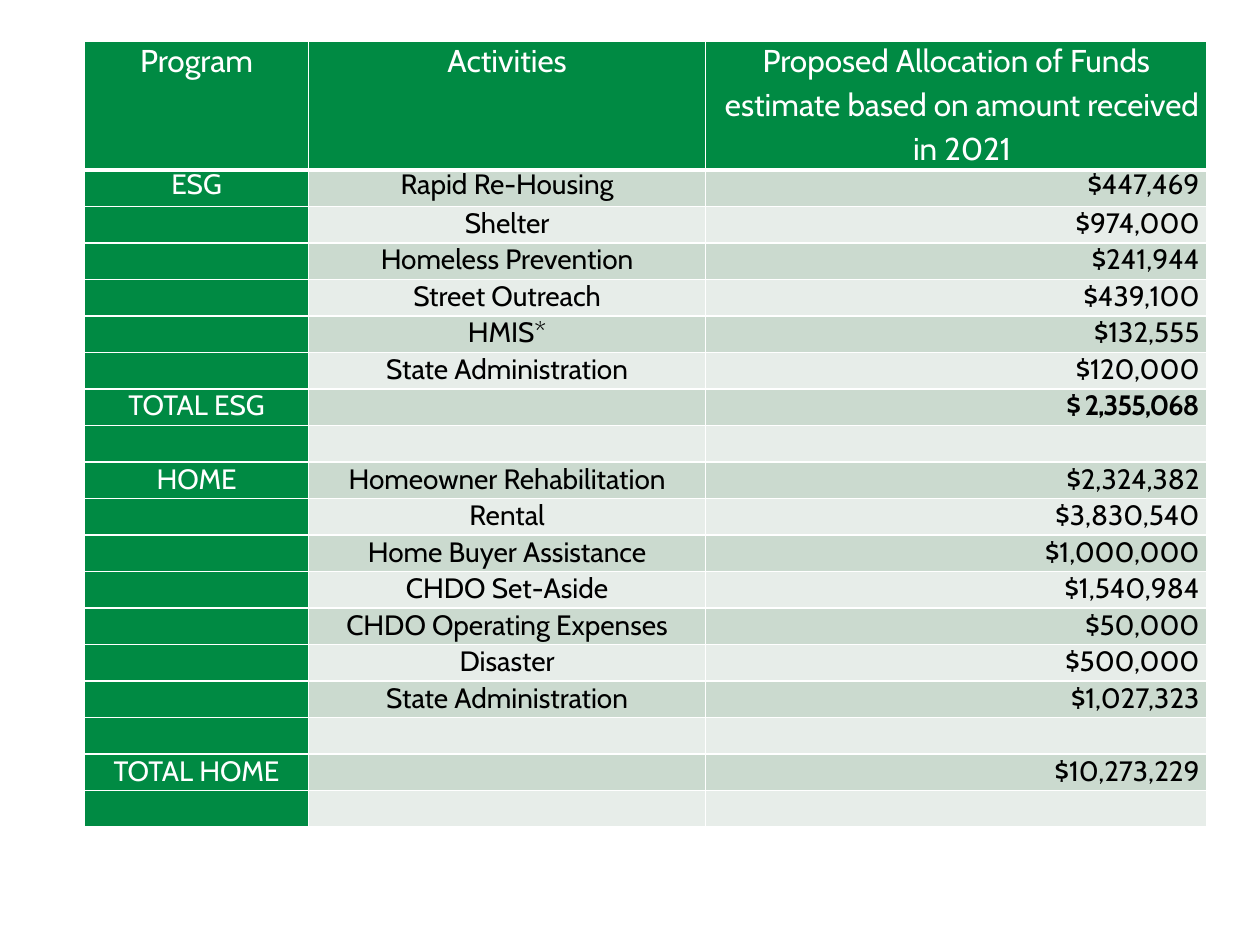
from dataclasses import dataclass

from lxml import etree
from pptx import Presentation, util as u
from pptx.dml.color import RGBColor
from pptx.enum import text
from pptx.oxml.ns import qn


@dataclass(frozen=True)
class Theme:
    font: str = "Cabin"
    green: str = "008A43"
    bands: tuple = ("CBDACF", "E7EDE9")
    white: str = "FFFFFF"
    black: str = "000000"
    header_size: int = 18
    body_size: int = 16
    thin: int = 1
    thick: int = 3


@dataclass(frozen=True)
class Entry:
    program: str = ""
    activity: str = ""
    amount: str = ""
    bold: bool = False
    tracking: float = 0


THEME = Theme()
LEFT, TOP = 0.67, 0.33
COLUMN_WIDTHS = (1.78, 3.15, 3.98)
HEADER_HEIGHT, ROW_HEIGHT = 1.02, 0.29
AMOUNT_INSET, HEADER_INDENT = 0.06, 0.09
CENTER, RIGHT = text.PP_ALIGN.CENTER, text.PP_ALIGN.RIGHT

HEADERS = (
    "Program",
    "Activities",
    "Proposed Allocation of Funds\nestimate based on amount received in 2021",
)
ENTRIES = (
    Entry("ESG", "Rapid Re-Housing", "$447,469"),
    Entry("", "Shelter", "$974,000"),
    Entry("", "Homeless Prevention", "$241,944"),
    Entry("", "Street Outreach", "$439,100"),
    Entry("", "HMIS*", "$132,555"),
    Entry("", "State Administration", "$120,000"),
    Entry("TOTAL ESG", "", "$ 2,355,068", bold=True, tracking=-0.7),
    Entry(),
    Entry("HOME", "Homeowner Rehabilitation", "$2,324,382"),
    Entry("", "Rental", "$3,830,540"),
    Entry("", "Home Buyer Assistance", "$1,000,000"),
    Entry("", "CHDO Set-Aside", "$1,540,984"),
    Entry("", "CHDO Operating Expenses", "$50,000"),
    Entry("", "Disaster", "$500,000"),
    Entry("", "State Administration", "$1,027,323"),
    Entry(),
    Entry("TOTAL HOME", "", "$10,273,229"),
    Entry(),
)


def set_borders(cell, top: int, bottom: int) -> None:
    """Draw white rules on all four sides of a cell."""
    properties = cell._tc.get_or_add_tcPr()
    widths = {"lnL": THEME.thin, "lnR": THEME.thin, "lnT": top, "lnB": bottom}
    for side, width in widths.items():
        line = etree.SubElement(properties, qn(f"a:{side}"), w=str(u.Pt(width)))
        fill = etree.SubElement(line, qn("a:solidFill"))
        etree.SubElement(fill, qn("a:srgbClr"), val=THEME.white)


def style_cell(cell, words: str, fill: str, color: str, size: int, align=CENTER,
               bold: bool = False, tracking: float = 0) -> None:
    """Fill a cell and format its text."""
    cell.fill.solid()
    cell.fill.fore_color.rgb = RGBColor.from_string(fill)
    cell.margin_left = cell.margin_top = cell.margin_bottom = 0
    cell.margin_right = u.Inches(AMOUNT_INSET) if align == RIGHT else 0
    cell.text_frame.text = words
    for para in cell.text_frame.paragraphs:
        para.alignment = align
        for span in para.runs:
            span.font.name = THEME.font
            span.font.size = u.Pt(size)
            span.font.bold = bold
            span.font.color.rgb = RGBColor.from_string(color)
            if tracking:
                span.font._element.set("spc", str(round(tracking * 100)))
        if not para.runs:  # keeps an empty row from growing
            etree.SubElement(para._p, qn("a:endParaRPr"), sz=str(size * 100))


def fill_header(table) -> None:
    for column, words in enumerate(HEADERS):
        cell = table.cell(0, column)
        set_borders(cell, THEME.thin, THEME.thick)
        style_cell(cell, words, THEME.green, THEME.white, THEME.header_size)
        for para in cell.text_frame.paragraphs[1:]:
            para.line_spacing = 1.15
            para._p.get_or_add_pPr().set("marL", str(u.Inches(HEADER_INDENT)))


def fill_entry(table, row: int, entry: Entry) -> None:
    band = THEME.bands[(row - 1) % 2]
    cells = [table.cell(row, column) for column in range(len(HEADERS))]
    for cell in cells:
        set_borders(cell, THEME.thick if row == 1 else THEME.thin, THEME.thin)
    program, activity, amount = cells
    size = THEME.body_size
    style_cell(program, entry.program, THEME.green, THEME.white, size)
    style_cell(activity, entry.activity, band, THEME.black, size)
    style_cell(amount, entry.amount, band, THEME.black, size, RIGHT,
               entry.bold, entry.tracking)
    if row == 1:  # tighter lines under the thick rule
        for cell in cells:
            cell.text_frame.paragraphs[0].line_spacing = u.Pt(18.2)


def main() -> None:
    deck = Presentation()
    deck.slide_width, deck.slide_height = u.Inches(10), u.Inches(7.5)
    page = deck.slides.add_slide(deck.slide_layouts[6])

    # Table grid
    height = HEADER_HEIGHT + ROW_HEIGHT * len(ENTRIES)
    table = page.shapes.add_table(
        len(ENTRIES) + 1, len(HEADERS), u.Inches(LEFT), u.Inches(TOP),
        u.Inches(sum(COLUMN_WIDTHS)), u.Inches(height)).table
    table.first_row = table.horz_banding = False
    for column, width in zip(table.columns, COLUMN_WIDTHS):
        column.width = u.Inches(width)
    for index, row in enumerate(table.rows):
        row.height = u.Inches(ROW_HEIGHT if index else HEADER_HEIGHT)

    # Contents
    fill_header(table)
    for row, entry in enumerate(ENTRIES, start=1):
        fill_entry(table, row, entry)
    deck.save("out.pptx")


if __name__ == "__main__":
    main()
